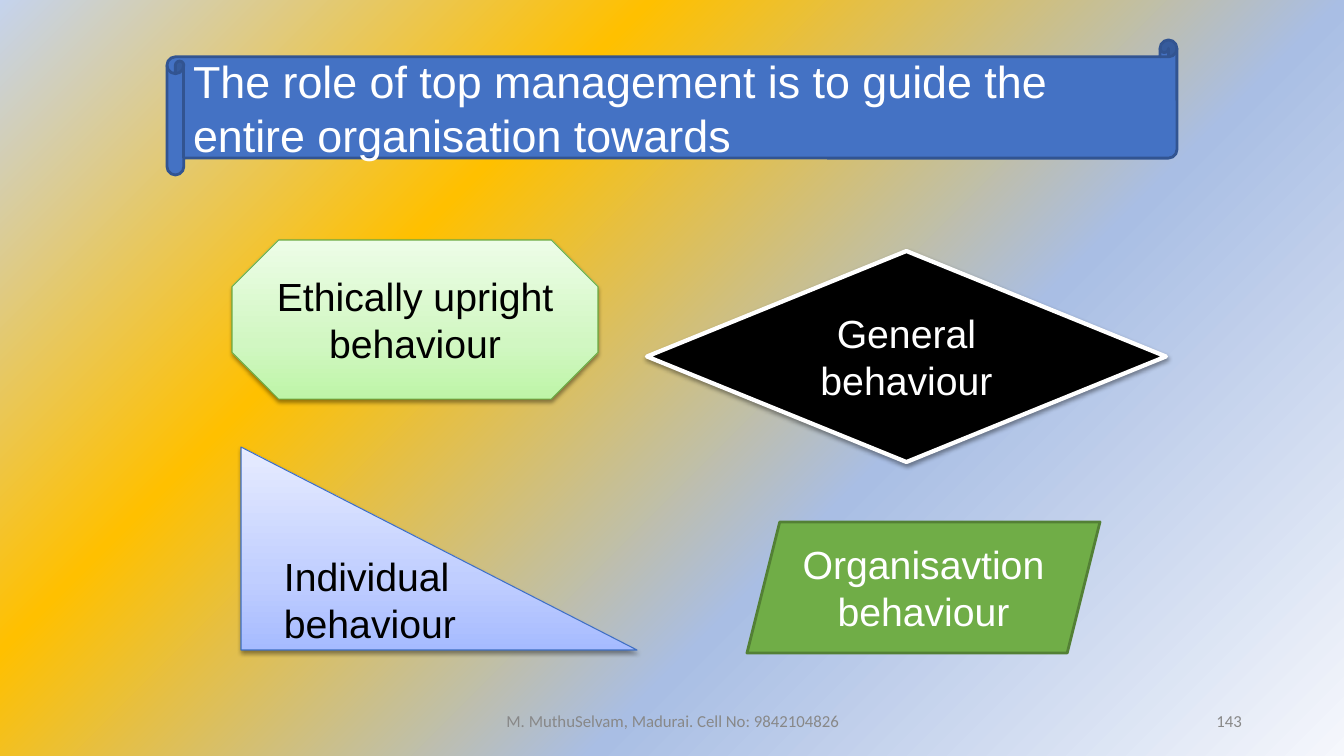
from lxml import etree
from pptx import Presentation
from pptx.dml.color import RGBColor
from pptx.enum.shapes import MSO_SHAPE
from pptx.enum.text import MSO_ANCHOR, MSO_AUTO_SIZE, PP_ALIGN
from pptx.oxml import parse_xml
from pptx.oxml.ns import nsdecls, qn
from pptx.util import Pt

LEFT, CENTER, RIGHT = PP_ALIGN.LEFT, PP_ALIGN.CENTER, PP_ALIGN.RIGHT
MIDDLE = MSO_ANCHOR.MIDDLE
TITLE_ONLY = 5
EMU_PER_PX = 914400 / 100.8
SLIDE_SIZE = (1344, 756)

COLORS = {
    "white": "FFFFFF", "black": "000000", "grey": "888888",
    "blue": "4472C4", "blue edge": "325491", "triangle edge": "3F6FC3",
    "green": "70AD47", "green edge": "538035", "octagon edge": "6DAC43",
}
# Gradient stops: (percent, colour)
BACKDROP = [(0, "F5F7FC"), (36, "A9BEE4"), (69, "FFC000"), (100, "C5D3ED")]
PALE_GREEN = [(0, "BEF5A7"), (35, "D1F7C2"), (100, "EDFDE7")]
PALE_BLUE = [(0, "A6BBFF"), (35, "C0CEFF"), (100, "E7ECFF")]
UPWARD = '<a:lin ang="16200000" scaled="0"/>'
FROM_CORNER = ('<a:path path="circle"><a:fillToRect l="100000" t="100000"/></a:path>'
               '<a:tileRect r="-100000" b="-100000"/>')

TITLE = "The role of top management is to guide the entire organisation towards"
SCROLL_BOX = (167, 40, 1010, 135)

# text, preset, box, fill, edge, edge width, shadow, text format
BEHAVIOURS = [
    ("Ethically upright behaviour", MSO_SHAPE.OCTAGON, (232, 240, 366, 159),
     PALE_GREEN, "octagon edge", 0.75, True, {"color": "black"}),
    ("General behaviour", MSO_SHAPE.DIAMOND, (647, 251, 519, 211),
     "black", "white", 3, True, {}),
    ("Individual behaviour", MSO_SHAPE.RIGHT_TRIANGLE, (241, 447, 396, 203),
     PALE_BLUE, "triangle edge", 0.75, True, {"color": "black", "align": LEFT}),
    ("Organisavtion behaviour", MSO_SHAPE.PARALLELOGRAM, (747, 522, 353, 131),
     "green", "green edge", 2, False, {}),
]
FOOTERS = [
    ("M. MuthuSelvam, Madurai. Cell No: 9842104826", (446, 701, 454, 40), CENTER),
    ("143", (950, 701, 302, 40), RIGHT),
]


def emu(box):
    return [round(px * EMU_PER_PX) for px in box]


def rgb(name):
    return RGBColor.from_string(COLORS[name])


def write(shape, text, size=28, font="Arial", color="white", align=CENTER):
    frame = shape.text_frame
    frame.word_wrap = True
    frame.auto_size = MSO_AUTO_SIZE.NONE
    frame.vertical_anchor = MIDDLE
    paragraph = frame.paragraphs[0]
    paragraph.alignment = align
    run = paragraph.add_run()
    run.text = text
    run.font.size = Pt(size)
    run.font.name = font
    run.font.color.rgb = rgb(color)


def apply_gradient(fill, properties, stops, direction):
    """Put a gradient where the solid fill of the properties element stands."""
    fill.solid()
    stop_xml = "".join(
        f'<a:gs pos="{percent * 1000}"><a:srgbClr val="{color}"/></a:gs>'
        for percent, color in stops)
    gradient = parse_xml(f'<a:gradFill {nsdecls("a")} rotWithShape="1">'
                         f'<a:gsLst>{stop_xml}</a:gsLst>{direction}</a:gradFill>')
    properties.replace(properties.find(qn("a:solidFill")), gradient)


def add_shadow(properties):
    effects = properties.find(qn("a:effectLst"))
    shadow = etree.SubElement(effects, qn("a:outerShdw"), blurRad=str(Pt(3.1)),
                              dist=str(Pt(1.6)), dir="5400000", rotWithShape="0")
    color = etree.SubElement(shadow, qn("a:srgbClr"), val=COLORS["black"])
    etree.SubElement(color, qn("a:alpha"), val="38000")


def add_figure(slide, preset, box, fill, edge, edge_width, shadowed=False):
    figure = slide.shapes.add_shape(preset, *emu(box))
    properties = figure._element.spPr
    if isinstance(fill, list):
        apply_gradient(figure.fill, properties, fill, UPWARD)
    else:
        figure.fill.solid()
        figure.fill.fore_color.rgb = rgb(fill)
    figure.line.color.rgb = rgb(edge)
    figure.line.width = Pt(edge_width)
    figure.shadow.inherit = False
    if shadowed:
        add_shadow(properties)
    return figure


def add_title(slide):
    """Lay the title placeholder over the flat part of a scroll."""
    add_figure(slide, MSO_SHAPE.HORIZONTAL_SCROLL, SCROLL_BOX, "blue", "blue edge", 2)
    left, top, width, height = SCROLL_BOX
    curl = height // 8
    title = slide.shapes.title
    title.left, title.top, title.width, title.height = emu(
        (left + curl, top + curl, width - 2 * curl, height - 2 * curl))
    write(title, TITLE, size=32, align=LEFT)
    slide.shapes._spTree.append(title._element)


def main():
    deck = Presentation()
    deck.slide_width, deck.slide_height = emu(SLIDE_SIZE)
    slide = deck.slides.add_slide(deck.slide_layouts[TITLE_ONLY])

    backdrop = slide.background.fill
    backdrop.solid()
    apply_gradient(backdrop, slide._element.find(".//" + qn("p:bgPr")),
                   BACKDROP, FROM_CORNER)

    add_title(slide)
    for text, preset, box, fill, edge, edge_width, shadowed, style in BEHAVIOURS:
        figure = add_figure(slide, preset, box, fill, edge, edge_width, shadowed)
        write(figure, text, **style)
    for text, box, align in FOOTERS:
        footer = slide.shapes.add_textbox(*emu(box))
        write(footer, text, size=12, font="Calibri", color="grey", align=align)

    deck.save("out.pptx")


if __name__ == "__main__":
    main()
